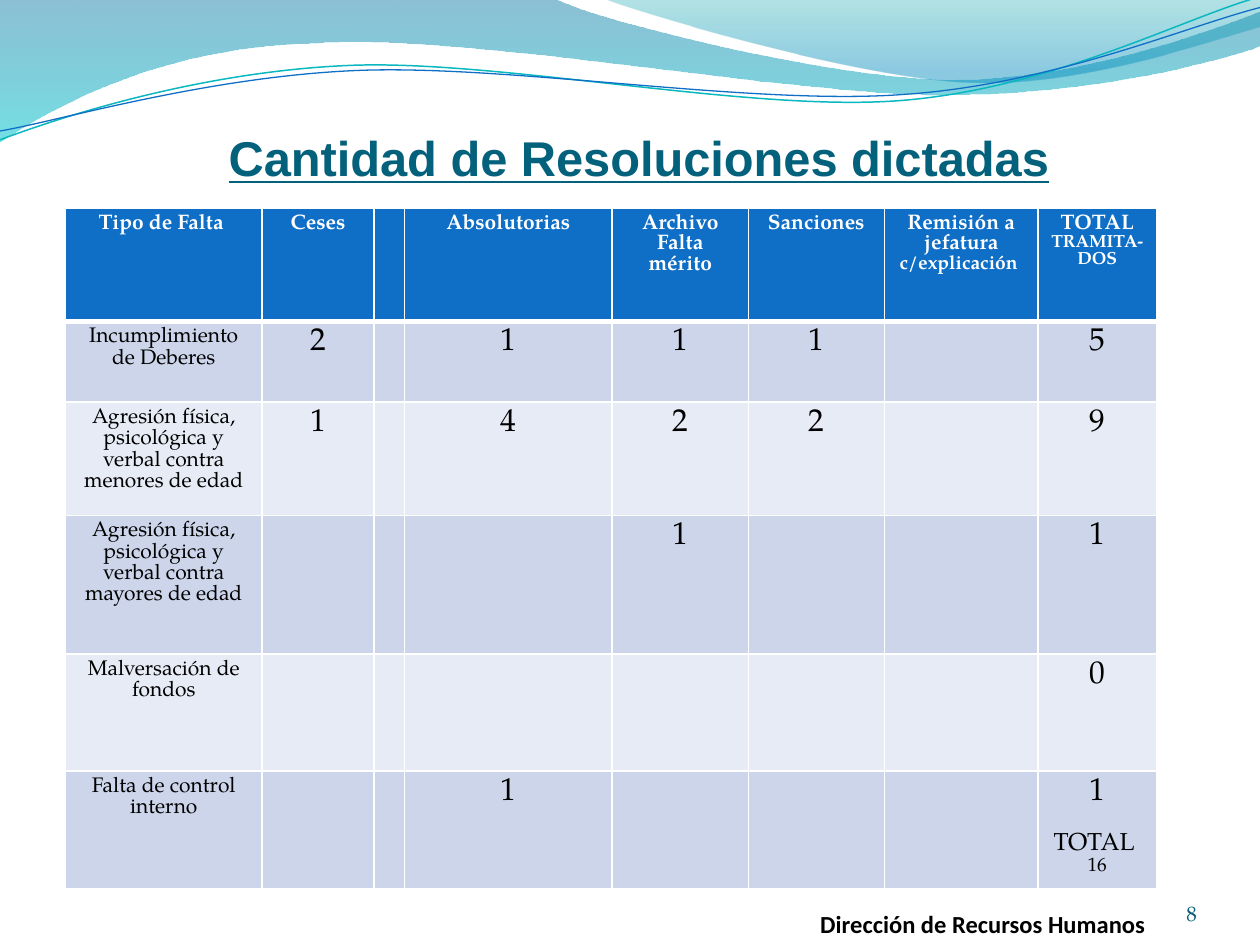
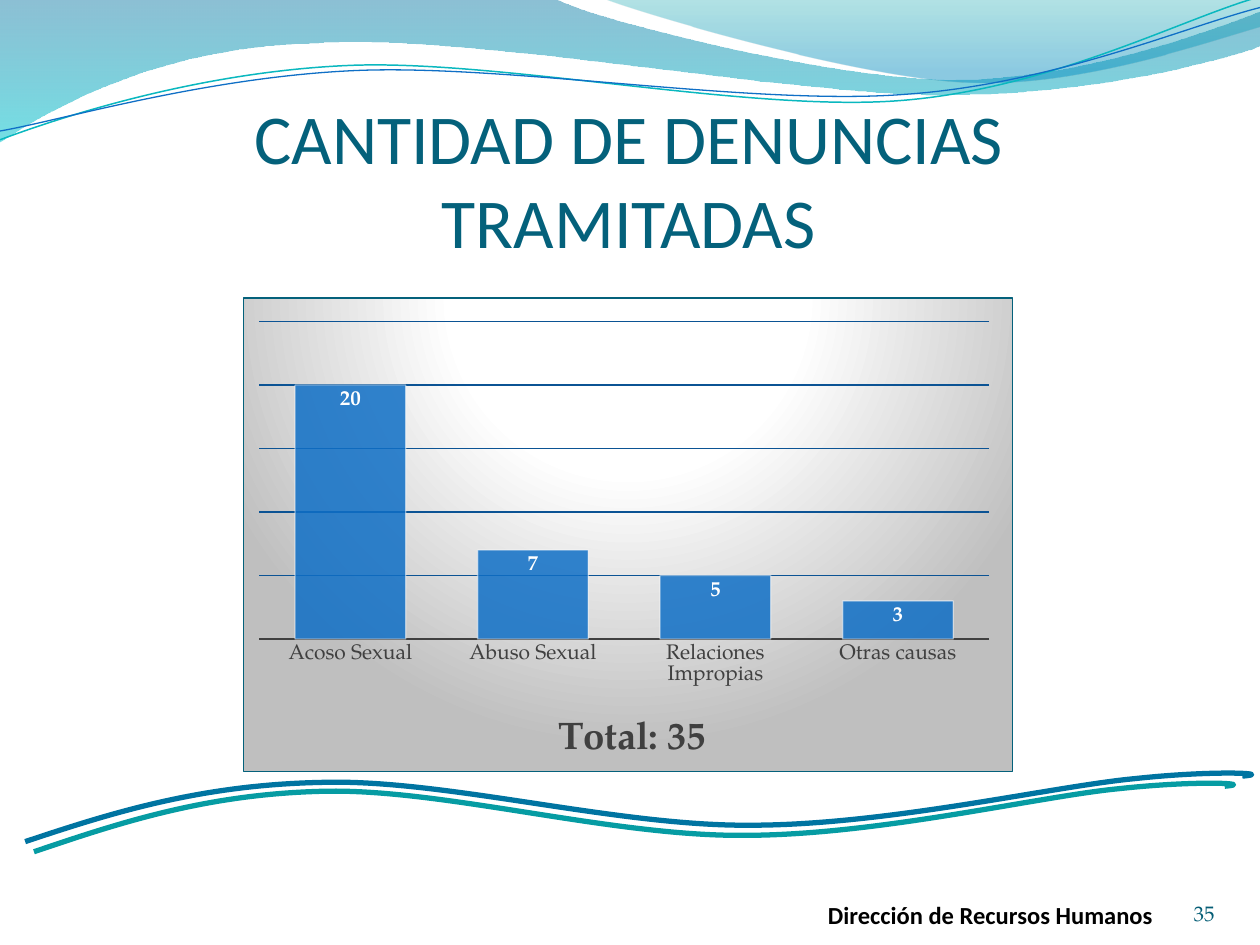
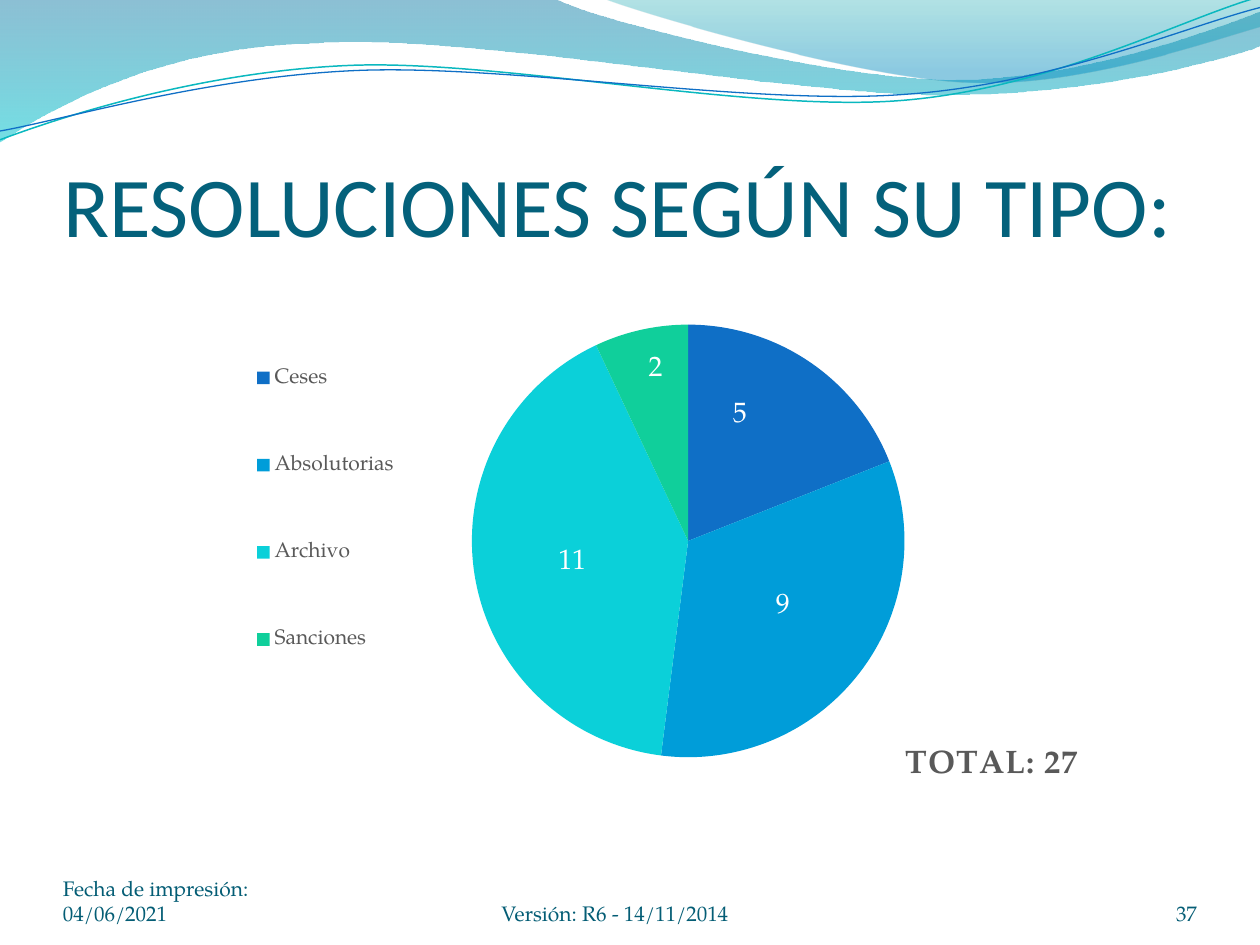
"""Build three slides on complaints and resolutions with a shared wave header."""
import dataclasses

import pptx
import pptx.chart.data
import pptx.dml.color
import pptx.enum.chart
import pptx.enum.text
import pptx.oxml
import pptx.oxml.ns
import pptx.util

Inches = pptx.util.Inches
Pt = pptx.util.Pt
qn = pptx.oxml.ns.qn
Align = pptx.enum.text.PP_ALIGN
ChartType = pptx.enum.chart.XL_CHART_TYPE
LabelPos = pptx.enum.chart.XL_LABEL_POSITION


@dataclasses.dataclass(frozen=True)
class Theme:
    body: str = "TeX Gyre Pagella"
    heading: str = "Calibri"
    title: str = "04617B"
    footer: str = "045D75"
    black: str = "000000"
    white: str = "FFFFFF"
    blue: str = "0F6FC6"
    teal: str = "0AB8BF"
    ribbon_blue: str = "0074A1"
    ribbon_teal: str = "069CA3"
    grid: str = "0B5394"
    dark: str = "404040"
    gray: str = "595959"
    bands: tuple = ("CCD5EA", "E7EBF5")
    slices: tuple = ("0F6FC6", "009DD9", "0BD0D9", "10CF9B")
    tiny: float = 11
    small: float = 12
    label: float = 14
    number: float = 18


T = Theme()

HEADER_BANDS = [
    ([(0, 0), (4.4, -0.01), (4.76, 0.17, 6.64, 0.63, 7.58, 0.63),
      (8.53, 0.63, 9.58, 0.26, 10, 0.09), (10.01, 0.36),
      (9.83, 0.44, 8.7, 0.76, 7.46, 0.75), (6.22, 0.75, 3.82, 0.28, 2.57, 0.34),
      (1.29, 0.36, 0.46, 0.83, -0.01, 1.13), (0, 0)],
     [(0, "0074A1", 45), (100, "00C6CF", 55)]),
    ([(4.79, -0.01), (5.09, 0.11, 6.82, 0.62, 7.69, 0.65),
      (8.56, 0.69, 9.61, 0.32, 10, 0.21), (10, 0), (4.79, -0.01)],
     [(0, "00A1A9", 30), (80, "008BBF", 45)]),
]
HEADER_LINES = [
    ([(0, 1.11), (0.48, 0.93, 1.58, 0.57, 2.77, 0.52),
      (3.95, 0.47, 5.93, 0.89, 7.13, 0.8), (8.33, 0.71, 9.38, 0.15, 9.98, -0.02)],
     T.teal, 0.85),
    ([(0, 1.04), (0.47, 0.96, 1.64, 0.61, 2.83, 0.56),
      (4.03, 0.51, 5.97, 0.84, 7.17, 0.75), (8.36, 0.67, 9.41, 0.21, 10, 0.06)],
     T.blue, 0.75),
]
RIBBON_LINES = [
    ([(0.27, 6.76), (0.95, 6.53, 1.64, 6.3, 2.58, 6.28),
      (3.52, 6.26, 4.86, 6.64, 5.91, 6.63), (6.96, 6.63, 8.25, 6.32, 8.88, 6.26),
      (9.52, 6.19, 9.97, 6.22, 9.72, 6.24)], T.ribbon_teal, 3),
    ([(0.2, 6.68), (0.89, 6.45, 1.59, 6.23, 2.55, 6.21),
      (3.52, 6.18, 4.89, 6.56, 5.96, 6.55), (7.04, 6.55, 8.36, 6.24, 9.01, 6.18),
      (9.66, 6.11, 10.12, 6.14, 9.86, 6.16)], T.ribbon_blue, 3),
]

COLUMN_WIDTHS = [1.56, 0.89, 0.23, 1.65, 1.08, 1.08, 1.22, 0.94]
ROW_HEIGHTS = [0.9, 0.64, 0.9, 1.1, 0.93, 0.93]
HEADINGS = [
    [("Tipo de Falta ", 12)], [("Ceses", 12)], [], [("Absolutorias", 12)],
    [("Archivo Falta mérito", 12)], [("Sanciones", 12)],
    [("Remisión a jefatura ", 12), ("c/explicación ", 11)],
    [("TOTAL ", 12), ("TRAMITA-DOS", 10)],
]
FAULTS = [
    ("Incumplimiento de Deberes", "2", "", "1", "1", "1", "", "5"),
    ("Agresión física, psicológica y verbal contra menores de edad",
     "1", "", "4", "2", "2", "", "9"),
    ("Agresión física, psicológica y verbal contra mayores de edad",
     "", "", "", "1", "", "", "1"),
    ("Malversación de fondos", "", "", "", "", "", "", "0"),
    ("Falta de control interno", "", "", "1", "", "", "", "1"),
]


def rgb(color):
    return pptx.dml.color.RGBColor.from_string(color)


def style(font, size=T.small, color=T.black, bold=False, name=T.body, underline=None):
    font.size, font.bold, font.name, font.underline = Pt(size), bold, name, underline
    font.color.rgb = rgb(color)


def write(p, text, align=None, before=None, **font):
    """Add a run of text to a paragraph and format it."""
    if align is not None:
        p.alignment = align
    if before is not None:
        p.space_before = Pt(before)
    r = p.add_run()
    r.text = text
    style(r.font, **font)
    return r


def xml(tag, inner=""):
    return pptx.oxml.parse_xml(
        f'<{tag} xmlns:a="http://schemas.openxmlformats.org/drawingml/2006/main" '
        f'xmlns:c="http://schemas.openxmlformats.org/drawingml/2006/chart">'
        f'{inner}</{tag.split()[0]}>')


def gradient(stops, direction):
    gs = "".join(
        f'<a:gs pos="{pos * 1000}"><a:srgbClr val="{color}">'
        f'<a:alpha val="{alpha * 1000}"/></a:srgbClr></a:gs>'
        for pos, color, alpha in stops)
    return xml('a:gradFill rotWithShape="1"', f"<a:gsLst>{gs}</a:gsLst>{direction}")


def place(parent, index, edge=True, **box):
    """Give a chart part a manual layout in fractions of the chart."""
    for old in parent.findall(qn("c:layout")):
        parent.remove(old)
    modes = '<c:xMode val="edge"/><c:yMode val="edge"/>' if edge else ""
    if index == 0:
        modes = '<c:layoutTarget val="inner"/>' + modes
    values = "".join(f'<c:{k} val="{v}"/>' for k, v in box.items())
    parent.insert(index, xml(
        "c:layout", f"<c:manualLayout>{modes}{values}</c:manualLayout>"))


class Deck:
    """Hold the presentation, its theme and the current slide."""

    def __init__(self):
        self.prs = pptx.Presentation()
        self.prs.slide_width, self.prs.slide_height = Inches(10), Inches(7.5)
        self.s = None

    def slide(self):
        self.s = self.prs.slides.add_slide(self.prs.slide_layouts[6])
        for outline, stops in HEADER_BANDS:
            self.band(outline, stops)
        for wave in HEADER_LINES:
            self.wave(*wave)

    def freeform(self, outline, close):
        """Draw an outline whose six-number parts are Bézier curves."""
        points = [(Inches(x), Inches(y)) for part in outline
                  for x, y in zip(part[::2], part[1::2])]
        builder = self.s.shapes.build_freeform(*points[0])
        builder.add_line_segments(points[1:], close=close)
        sp = builder.convert_to_shape()
        segments = iter(list(sp._element.iter(qn("a:lnTo"))))
        for part in outline[1:]:
            first = next(segments)
            if len(part) == 6:
                curve = xml("a:cubicBezTo")
                first.addprevious(curve)
                for segment in (first, next(segments), next(segments)):
                    curve.append(segment[0])
                    segment.getparent().remove(segment)
        sp.shadow.inherit = False
        sp.fill.background()
        return sp

    def band(self, outline, stops):
        sp = self.freeform(outline, True)
        sp.line.fill.background()
        sp_pr = sp._element.spPr
        sp_pr.replace(sp_pr.find(qn("a:noFill")),
                      gradient(stops, '<a:lin ang="5400000" scaled="1"/>'))

    def wave(self, outline, color, width):
        sp = self.freeform(outline, False)
        sp.line.color.rgb = rgb(color)
        sp.line.width = Pt(width)

    def text(self, box, text, top=0, **fmt):
        tf = self.s.shapes.add_textbox(*map(Inches, box)).text_frame
        tf.word_wrap = True
        tf.vertical_anchor = pptx.enum.text.MSO_ANCHOR.BOTTOM
        tf.margin_left = tf.margin_right = tf.margin_bottom = 0
        tf.margin_top = Inches(top)
        write(tf.paragraphs[0], text, **fmt)

    def title(self, box, text, size, name=T.heading, **fmt):
        self.text(box, text, top=0.05, size=size, color=T.title, name=name, **fmt)

    def footer(self, left, width, text, align=Align.LEFT):
        self.text((left, 6.95, width, 0.4), text, color=T.footer, align=align)

    def department(self, left, top):
        self.text((left, top, 2.99, 0.4), "Dirección de Recursos Humanos", top=0.05,
                  size=T.label, bold=True, name=T.heading)

    def cell(self, cell, runs, fill, color=T.black, bold=False, top=1, bottom=1):
        cell.fill.solid()
        cell.fill.fore_color.rgb = rgb(fill)
        widths = {"L": 1, "R": 1, "T": top, "B": bottom}
        for i, (side, width) in enumerate(widths.items()):
            cell._tc.get_or_add_tcPr().insert(i, xml(
                f'a:ln{side} w="{Pt(width)}"',
                f'<a:solidFill><a:srgbClr val="{T.white}"/></a:solidFill>'))
        for text, size in runs:
            write(cell.text_frame.paragraphs[0], text, align=Align.CENTER,
                  size=size, color=color, bold=bold)

    def table(self, left, top):
        table = self.s.shapes.add_table(
            len(ROW_HEIGHTS), len(COLUMN_WIDTHS), Inches(left), Inches(top),
            Inches(sum(COLUMN_WIDTHS)), Inches(sum(ROW_HEIGHTS))).table
        for column, width in zip(table.columns, COLUMN_WIDTHS):
            column.width = Inches(width)
        for row, height in zip(table.rows, ROW_HEIGHTS):
            row.height = Inches(height)
        for c, runs in enumerate(HEADINGS):
            self.cell(table.cell(0, c), runs, T.blue, T.white, True, bottom=3)
        for r, row in enumerate(FAULTS, 1):
            for c, text in enumerate(row):
                runs = [(text, T.number if c else T.small)] if text else []
                self.cell(table.cell(r, c), runs, T.bands[(r - 1) % 2],
                          top=3 if r == 1 else 1)
        return table

    def chart(self, kind, box, name, categories, values, plot, title, title_at, **fmt):
        data = pptx.chart.data.CategoryChartData()
        data.categories = categories
        data.add_series(name, values)
        chart = self.s.shapes.add_chart(kind, *map(Inches, box), data).chart
        style(chart.font, size=10)
        chart.has_legend = False
        chart.has_title = True
        r = write(chart.chart_title.text_frame.paragraphs[0], title, bold=True, **fmt)
        place(chart.chart_title._element, 1, x=title_at[0], y=title_at[1])
        place(chart._chartSpace.chart.plotArea, 0, **dict(zip("xywh", plot)))
        return chart, r

    def columns(self):
        chart, _ = self.chart(
            ChartType.COLUMN_CLUSTERED, (1.93, 2.36, 6.11, 3.77), "Series 1",
            ["Acoso Sexual", "Abuso Sexual", "Relaciones Impropias", "Otras causas"],
            [20, 7, 5, 3], (0.02, 0.05, 0.95, 0.67), "Total: 35", (0.4, 0.87),
            size=22, color=T.dark)
        sp_pr = xml("c:spPr", f'<a:ln w="{Pt(0.75)}"><a:solidFill>'
                    f'<a:srgbClr val="{T.title}"/></a:solidFill></a:ln>')
        sp_pr.insert(0, gradient(
            [(0, T.white, 100), (39, T.white, 100), (100, "BFBFBF", 100)],
            '<a:path path="circle">'
            '<a:fillToRect l="50000" t="-80000" r="50000" b="180000"/></a:path>'))
        chart._chartSpace.chart.addnext(sp_pr)

        axis = chart.category_axis
        axis.major_tick_mark = pptx.enum.chart.XL_TICK_MARK.NONE
        axis.format.line.color.rgb = rgb(T.dark)
        axis.format.line.width = Pt(1.5)
        style(axis.tick_labels.font, color=T.dark)
        axis = chart.value_axis
        axis.visible = False
        axis.minimum_scale, axis.maximum_scale, axis.major_unit = 0, 25, 5
        axis.has_major_gridlines = True
        axis.major_gridlines.format.line.color.rgb = rgb(T.grid)
        axis.major_gridlines.format.line.width = Pt(0.75)

        plot = chart.plots[0]
        plot.gap_width = 65
        plot.vary_by_categories = False
        series = plot.series[0]
        series.format.fill.solid()
        series.format.fill.fore_color.rgb = rgb(T.blue)
        series.format.line.color.rgb = rgb(T.white)
        series.format.line.width = Pt(0.75)
        colors = series._element.spPr.iter(qn("a:srgbClr"))
        for color, alpha in zip(list(colors), (85, 50)):
            color.append(xml(f'a:alpha val="{alpha * 1000}"'))
        labels = series.data_labels
        labels.show_value = True
        labels.position = LabelPos.INSIDE_END
        style(labels.font, color=T.white, bold=True)

    def pie(self):
        chart, r = self.chart(
            ChartType.PIE, (1.38, 2.02, 7.29, 4.64), "TOTAL: 27",
            ["Ceses", "Absolutorias", "Archivo", "Sanciones"], [19, 33, 41, 7],
            (0.32, 0.12, 0.48, 0.74), "TOTAL: 27", (0.79, 0.83),
            size=18.6, color=T.gray)
        r._r.get_or_add_rPr().set("spc", "50")
        chart.has_legend = True
        legend = chart.legend
        legend.position = pptx.enum.chart.XL_LEGEND_POSITION.TOP
        legend.include_in_layout = False
        style(legend.font, color=T.gray)
        place(legend._element, 1, x=0.08, y=0.08, w=0.17, h=0.71)

        plot = chart.plots[0]
        plot.vary_by_categories = True
        series = plot.series[0]
        counts = ["5", "9", "11", "2"]
        for i, (color, count) in enumerate(zip(T.slices, counts)):
            point = series.points[i]
            point.format.fill.solid()
            point.format.fill.fore_color.rgb = rgb(color)
            point.format.line.fill.background()
            label = point.data_label
            write(label.text_frame.paragraphs[0], count, size=16, color=T.white)
            label.position = LabelPos.CENTER
        shifts = [(-0.01, -0.06), (0.01, 0), (-0.01, 0.01), (-0.01, -0.11)]
        for label, (x, y) in zip(series._element.iter(qn("c:dLbl")), shifts):
            place(label, 1, edge=False, x=x, y=y)


def main():
    deck = Deck()

    deck.slide()
    deck.title((0.53, 0.7, 9.08, 0.78), "Cantidad de Resoluciones dictadas", 27.9,
               name="Arial", bold=True, underline=True, align=Align.CENTER)
    deck.footer(8.67, 0.83, "8", Align.RIGHT)
    deck.department(6.51, 7.05)
    tf = deck.table(0.52, 1.65).cell(5, 7).text_frame
    write(tf.add_paragraph(), "TOTAL ", Align.CENTER, before=14, size=T.label)
    write(tf.add_paragraph(), "16", Align.CENTER, size=T.tiny)
    for p, leading in zip(tf.paragraphs, (T.number, T.label, T.tiny)):
        p.line_spacing = Pt(leading)

    deck.slide()
    for wave in RIBBON_LINES:
        deck.wave(*wave)
    deck.department(6.57, 6.98)
    deck.footer(8.81, 0.83, "35", Align.RIGHT)
    deck.title((0.74, 0.47, 8.5, 1.61), "CANTIDAD DE DENUNCIAS TRAMITADAS", 40,
               align=Align.CENTER)
    deck.columns()

    deck.slide()
    deck.title((0.5, 0.77, 9.08, 1.25), "RESOLUCIONES SEGÚN SU TIPO:", 48.6)
    deck.footer(0.5, 2.33, "Fecha de impresión: 04/06/2021")
    deck.footer(3.98, 2.61, "Versión: R6 - 14/11/2014")
    deck.footer(8.67, 0.83, "37", Align.RIGHT)
    deck.pie()

    deck.prs.save("out.pptx")


if __name__ == "__main__":
    main()
